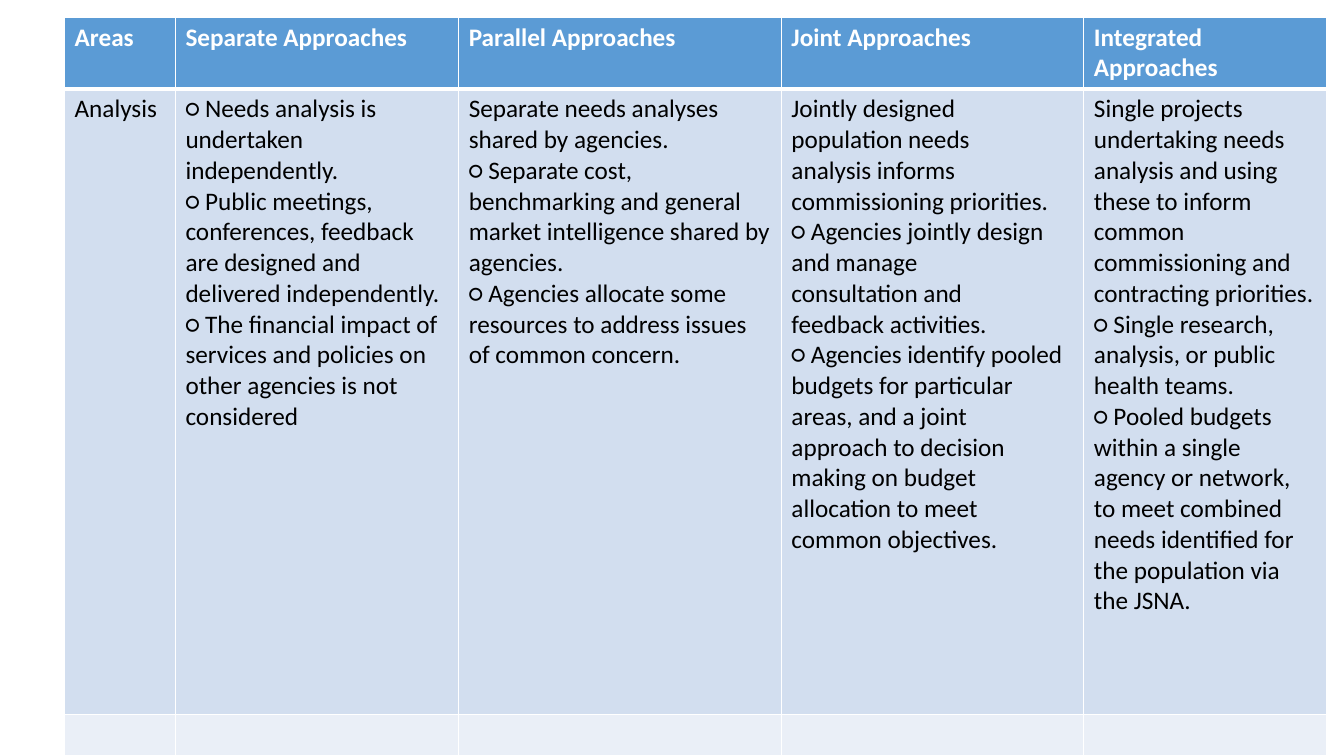
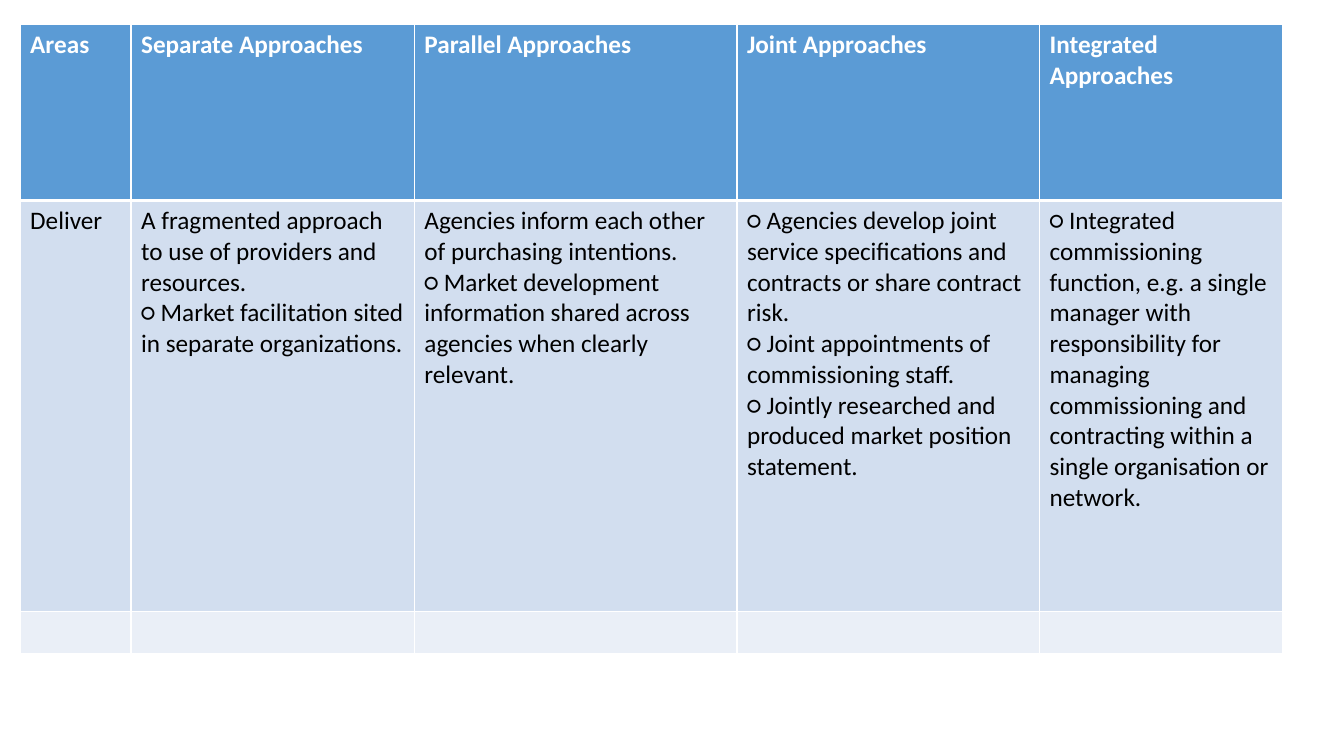
"""Build two slides of tables comparing commissioning approaches."""
import pptx
import pptx.dml.color
import pptx.oxml
import pptx.oxml.ns
import pptx.util
from pptx.util import Inches

COLORS = {"header": "5B9BD5", "body": "D2DEEF", "spare": "EAEFF7",
          "light": "FFFFFF", "dark": "000000"}
FONT = "Calibri"
TEXT_SIZE = 18
THIN, THICK = 1, 3
COLUMN_WIDTHS = [1.1, 2.81, 3.2, 3, 2.41]
HEADINGS = ["Areas", "Separate Approaches", "Parallel Approaches",
            "Joint Approaches", "Integrated Approaches"]

TABLES = [
    {
        "position": (0.64, 0.17),
        "heights": [0.7, 6.21, 0.41],
        "body": [
            ["Analysis"],
            ["○ Needs analysis is", "undertaken", "independently.",
             "○ Public meetings,", "conferences, feedback",
             "are designed and", "delivered independently.",
             "○ The financial impact of", "services and policies on",
             "other agencies is not considered"],
            ["Separate needs analyses shared by agencies.",
             "○ Separate cost, benchmarking and general market intelligence "
             "shared by agencies.",
             "○ Agencies allocate some resources to address issues of common "
             "concern."],
            ["Jointly designed", "population needs", "analysis informs",
             "commissioning priorities.", "○ Agencies jointly design",
             "and manage", "consultation and", "feedback activities.",
             "○ Agencies identify pooled", "budgets for particular",
             "areas, and a joint", "approach to decision",
             "making on budget", "allocation to meet",
             "common objectives."],
            ["Single projects undertaking needs analysis and using these to "
             "inform common commissioning and contracting priorities.",
             "○ Single research, analysis, or public health teams.",
             "○ Pooled budgets within a single agency or network, to meet "
             "combined needs identified for the population via the JSNA."],
        ],
    },
    {
        "position": (0.2, 0.24),
        "heights": [1.75, 4.08, 0.41],
        "body": [
            ["Deliver"],
            ["A fragmented approach to use of providers and resources.",
             "○ Market facilitation sited in separate organizations."],
            ["Agencies inform each other of purchasing intentions.",
             "○ Market development information shared across agencies when "
             "clearly relevant."],
            ["○ Agencies develop joint service specifications and contracts "
             "or share contract risk.",
             "○ Joint appointments of commissioning staff.",
             "○ Jointly researched and produced market position statement."],
            ["○ Integrated commissioning function, e.g. a single manager with "
             "responsibility for managing commissioning and contracting "
             "within a single organisation or network."],
        ],
    },
]


def color(name):
    return pptx.dml.color.RGBColor.from_string(COLORS[name])


def set_borders(cell, top, bottom):
    properties = cell._tc.get_or_add_tcPr()
    widths = {"lnL": THIN, "lnR": THIN, "lnT": top, "lnB": bottom}
    for side, width in widths.items():
        properties.append(pptx.oxml.parse_xml(
            f'<a:{side} {pptx.oxml.ns.nsdecls("a")} w="{pptx.util.Pt(width)}">'
            f'<a:solidFill><a:srgbClr val="{COLORS["light"]}"/></a:solidFill>'
            f'</a:{side}>'))


def write_cell(cell, paragraphs, text_color, bold):
    frame = cell.text_frame
    for index, text in enumerate(paragraphs):
        para = frame.add_paragraph() if index else frame.paragraphs[0]
        span = para.add_run()
        span.text = text
        span.font.name = FONT
        span.font.size = pptx.util.Pt(TEXT_SIZE)
        span.font.bold = bold
        span.font.color.rgb = color(text_color)


def add_comparison(page, content):
    left, top = content["position"]
    heights = content["heights"]
    rows = [
        ("header", [[heading] for heading in HEADINGS], "light", True, THIN, THICK),
        ("body", content["body"], "dark", False, THICK, THIN),
        ("spare", [[] for _ in HEADINGS], "dark", False, THIN, THIN),
    ]
    table = page.shapes.add_table(
        len(rows), len(HEADINGS), Inches(left), Inches(top),
        Inches(sum(COLUMN_WIDTHS)), Inches(sum(heights))).table
    for column, width in zip(table.columns, COLUMN_WIDTHS):
        column.width = Inches(width)
    for row, height, (fill, texts, text_color, bold, upper, lower) in zip(
            table.rows, heights, rows):
        row.height = Inches(height)
        for cell, paragraphs in zip(row.cells, texts):
            set_borders(cell, upper, lower)
            cell.fill.solid()
            cell.fill.fore_color.rgb = color(fill)
            write_cell(cell, paragraphs, text_color, bold)


def main():
    deck = pptx.Presentation()
    deck.slide_width = Inches(13.33)
    deck.slide_height = Inches(7.5)
    for content in TABLES:
        page = deck.slides.add_slide(deck.slide_layouts[6])
        add_comparison(page, content)
    deck.save("out.pptx")


if __name__ == "__main__":
    main()
